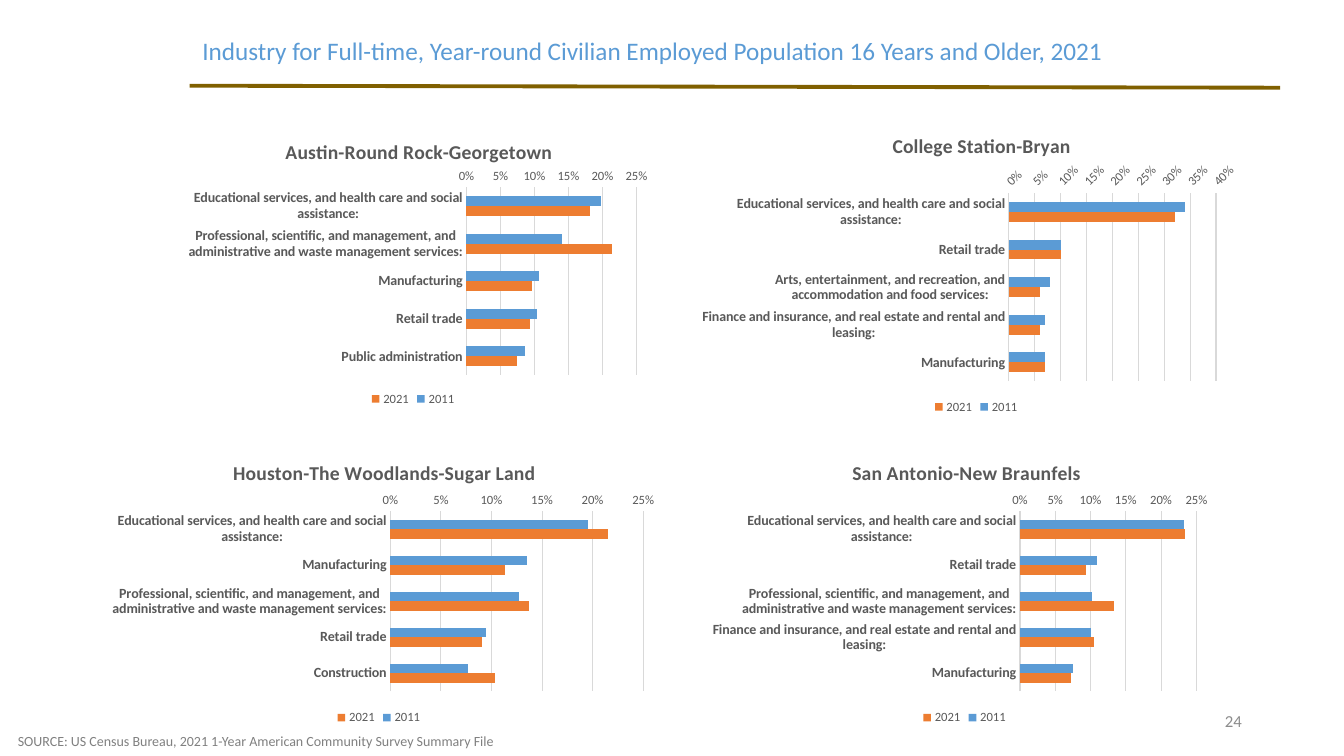
"""Build a slide of four bar charts on industry of employment in Texas metro areas."""
from lxml import etree
from pptx import Presentation
from pptx import util as u
from pptx.chart.data import CategoryChartData
from pptx.dml.color import RGBColor
from pptx.enum import chart as ch, shapes, text
from pptx.oxml.ns import qn

BLUE = RGBColor(0x5B, 0x9B, 0xD5)
ORANGE = RGBColor(0xED, 0x7D, 0x31)
BROWN = RGBColor(0x80, 0x60, 0x00)
DARK = RGBColor(0x59, 0x59, 0x59)
GREY = RGBColor(0x80, 0x80, 0x80)
NUMBER_GREY = RGBColor(0x8C, 0x8C, 0x8C)
GRID = RGBColor(0xD9, 0xD9, 0xD9)
FONT = "Calibri"

EDUCATION = "Educational services, and health care and social assistance:"
PROFESSIONAL = ("Professional, scientific, and management, and "
                "administrative and waste management services:")
ARTS = "Arts, entertainment, and recreation, and accommodation and food services:"
FINANCE = "Finance and insurance, and real estate and rental and leasing:"
MAKING = "Manufacturing"
RETAIL = "Retail trade"

METROS = [
    dict(name="Austin-Round Rock-Georgetown", box=(4.29, 2.95, 12.24, 7.39),
         title_x=0.23, plot=(0.61, 0.24, 0.35, 0.64), top=0.25, turn=0,
         cats=[EDUCATION, PROFESSIONAL, MAKING, RETAIL, "Public administration"],
         y2011=[0.198, 0.141, 0.106, 0.104, 0.086],
         y2021=[0.181, 0.214, 0.097, 0.094, 0.074]),
    dict(name="College Station-Bryan", box=(17.7, 2.77, 13.77, 7.77),
         title_x=0.34, plot=(0.56, 0.27, 0.38, 0.61), top=0.4, turn=-45,
         cats=[EDUCATION, RETAIL, ARTS, FINANCE, MAKING],
         y2011=[0.34, 0.1, 0.08, 0.07, 0.07],
         y2021=[0.32, 0.1, 0.06, 0.06, 0.07]),
    dict(name="Houston-The Woodlands-Sugar Land", box=(2.31, 11.05, 14.48, 7.32),
         title_x=0.24, plot=(0.52, 0.25, 0.44, 0.62), top=0.25, turn=0,
         cats=[EDUCATION, MAKING, PROFESSIONAL, RETAIL, "Construction"],
         y2011=[0.195, 0.135, 0.127, 0.095, 0.077],
         y2021=[0.215, 0.113, 0.137, 0.091, 0.103]),
    dict(name="San Antonio-New Braunfels", box=(17.96, 11.05, 12.7, 7.32),
         title_x=0.27, plot=(0.61, 0.25, 0.35, 0.62), top=0.25, turn=0,
         cats=[EDUCATION, RETAIL, PROFESSIONAL, FINANCE, MAKING],
         y2011=[0.233, 0.109, 0.102, 0.1, 0.075],
         y2021=[0.234, 0.094, 0.133, 0.105, 0.072]),
]


def style(font, size, color, bold=False):
    font.name, font.size, font.bold = FONT, u.Pt(size), bold
    font.color.rgb = color


def place(parent, index, settings):
    for old in parent.findall(qn("c:layout")):
        parent.remove(old)
    layout = etree.Element(qn("c:layout"))
    manual = etree.SubElement(layout, qn("c:manualLayout"))
    for tag, value in settings:
        etree.SubElement(manual, qn("c:" + tag)).set("val", str(value))
    parent.insert(index, layout)


prs = Presentation()
prs.slide_width, prs.slide_height = u.Cm(33.87), u.Cm(19.05)
s = prs.slides.add_slide(prs.slide_layouts[6])

rule = s.shapes.add_connector(shapes.MSO_CONNECTOR.STRAIGHT,
                              u.Cm(4.78), u.Cm(2.16), u.Cm(32.26), u.Cm(2.21))
rule.line.color.rgb = BROWN
rule.line.width = u.Pt(2.75)
etree.SubElement(rule._element.spPr, qn("a:effectLst"))

MIDDLE, TOP = text.MSO_ANCHOR.MIDDLE, text.MSO_ANCHOR.TOP
LEFT, RIGHT = text.PP_ALIGN.LEFT, text.PP_ALIGN.RIGHT
for words, box, size, color, anchor, align, spacing in [
    ("24", (23.93, 17.65, 7.62, 1.02), 12, NUMBER_GREY, MIDDLE, RIGHT, 1.0),
    ("Industry for Full-time, Year-round Civilian Employed Population 16 Years and Older, 2021",
     (4.85, 0.38, 26.85, 1.88), 18, BLUE, MIDDLE, LEFT, 0.9),
    ("SOURCE: US Census Bureau, 2021 1-Year American Community Survey Summary File",
     (0.2, 18.34, 14.48, 0.69), 10, GREY, TOP, LEFT, 1.0),
]:
    tf = s.shapes.add_textbox(*map(u.Cm, box)).text_frame
    tf.word_wrap = True
    tf.vertical_anchor = anchor
    tf.text = words
    p = tf.paragraphs[0]
    p.alignment, p.line_spacing = align, spacing
    style(p.runs[0].font, size, color)

for metro in METROS:
    data = CategoryChartData(number_format="0%")
    data.categories = metro["cats"]
    data.add_series("2011", metro["y2011"])
    data.add_series("2021", metro["y2021"])
    chart = s.shapes.add_chart(ch.XL_CHART_TYPE.BAR_CLUSTERED,
                               *map(u.Cm, metro["box"]), data).chart
    style(chart.font, 10, DARK)

    chart.has_title = True
    tf = chart.chart_title.text_frame
    tf.text = metro["name"]
    style(tf.paragraphs[0].runs[0].font, 14, DARK, True)
    place(chart.chart_title._element, 1,
          [("xMode", "edge"), ("yMode", "edge"), ("x", metro["title_x"]), ("y", 0.06)])
    place(chart._chartSpace.chart.plotArea, 0,
          [("layoutTarget", "inner"), ("xMode", "edge"), ("yMode", "edge"),
           *zip("xywh", metro["plot"])])

    chart.has_legend = True
    chart.legend.position = ch.XL_LEGEND_POSITION.BOTTOM
    chart.legend.include_in_layout = False
    style(chart.legend.font, 9, DARK)

    plot = chart.plots[0]
    plot.gap_width, plot.overlap = 182, 0
    plot.vary_by_categories = False
    for series, color in zip(plot.series, (BLUE, ORANGE)):
        series.format.fill.solid()
        series.format.fill.fore_color.rgb = color
        series.invert_if_negative = False

    cat, val = chart.category_axis, chart.value_axis
    for axis in (cat, val):
        axis.major_tick_mark = axis.minor_tick_mark = ch.XL_TICK_MARK.NONE
    cat.reverse_order = True
    style(cat.tick_labels.font, 10, DARK, True)
    style(val.tick_labels.font, 9, DARK)
    val.minimum_scale, val.maximum_scale, val.major_unit = 0, metro["top"], 0.05
    val.tick_labels.number_format = "0%"
    val.tick_labels.number_format_is_linked = False
    val.format.line.fill.background()
    val.has_major_gridlines = True
    for line in (cat.format.line, val.major_gridlines.format.line):
        line.color.rgb = GRID
        line.width = u.Pt(0.75)
    if metro["turn"]:
        body = val._element.find(qn("c:txPr")).find(qn("a:bodyPr"))
        body.set("rot", str(metro["turn"] * 60000))
        body.set("vert", "horz")

prs.save("out.pptx")
